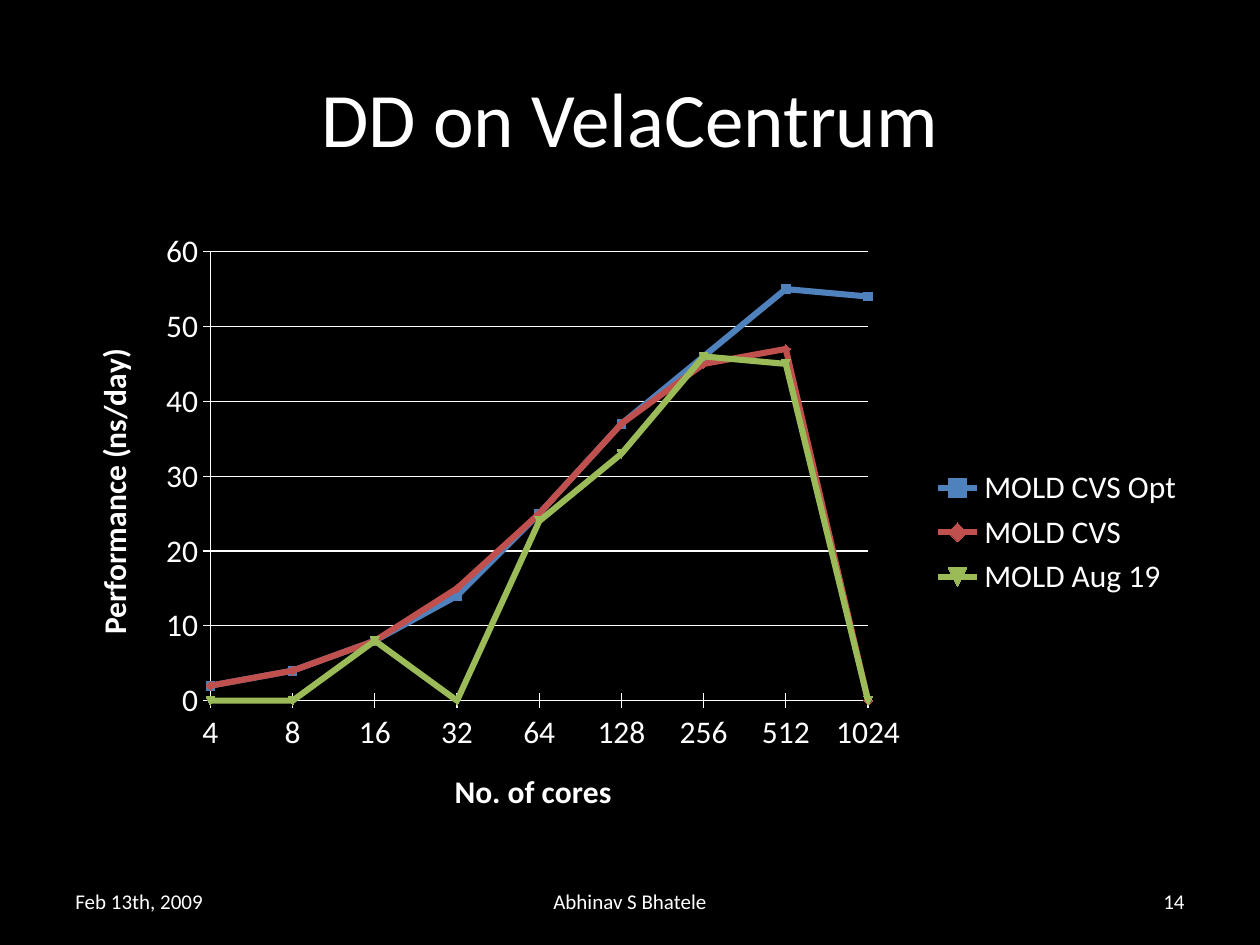
import dataclasses

import pptx
import pptx.chart.data
import pptx.dml.color
import pptx.enum.chart
import pptx.enum.text
import pptx.util
from lxml import etree

Pt = pptx.util.Pt
RGB = pptx.dml.color.RGBColor.from_string
ALIGN = pptx.enum.text.PP_ALIGN


@dataclasses.dataclass(frozen=True)
class Theme:
    font: str = "Calibri"
    background: str = "000000"
    ink: str = "FFFFFF"
    series: tuple = ("4F81BD", "C0504D", "9BBB59")
    title_size: int = 44
    chart_size: int = 18
    footer_size: int = 12


class Deck:
    def __init__(self, prs, theme):
        self.theme = theme
        self.s = prs.slides.add_slide(prs.slide_layouts[6])
        fill = self.s.background.fill
        fill.solid()
        fill.fore_color.rgb = RGB(theme.background)

    def style_font(self, font, size, bold=False):
        font.name = self.theme.font
        font.size = Pt(size)
        font.bold = bold
        font.color.rgb = RGB(self.theme.ink)

    def text(self, text, box, size, align):
        sp = self.s.shapes.add_textbox(*map(Pt, box))
        tf = sp.text_frame
        tf.word_wrap = True
        tf.vertical_anchor = pptx.enum.text.MSO_ANCHOR.MIDDLE
        p = tf.paragraphs[0]
        p.alignment = align
        r = p.add_run()
        r.text = text
        self.style_font(r.font, size)

    def axis(self, axis, title):
        r = axis.axis_title.text_frame.paragraphs[0].add_run()
        r.text = title
        self.style_font(r.font, self.theme.chart_size, bold=True)
        axis.major_tick_mark = pptx.enum.chart.XL_TICK_MARK.CROSS
        self.ink_line(axis.format.line)

    def ink_line(self, line):
        line.color.rgb = RGB(self.theme.ink)
        line.width = Pt(0.75)

    def line_chart(self, box, categories, series, x_title, y_title, plot):
        data = pptx.chart.data.CategoryChartData()
        data.categories = categories
        for name, values in series.items():
            data.add_series(name, values)
        kind = pptx.enum.chart.XL_CHART_TYPE.LINE_MARKERS
        chart = self.s.shapes.add_chart(kind, *map(Pt, box), data).chart
        self.style_font(chart.font, self.theme.chart_size)
        chart.has_title = False
        chart.has_legend = True
        chart.legend.position = pptx.enum.chart.XL_LEGEND_POSITION.RIGHT
        chart.legend.include_in_layout = False

        self.axis(chart.category_axis, x_title)
        y_axis = chart.value_axis
        self.axis(y_axis, y_title)
        y_axis.minimum_scale, y_axis.maximum_scale, y_axis.major_unit = 0, 60, 10
        y_axis.has_major_gridlines = True
        self.ink_line(y_axis.major_gridlines.format.line)

        chart.plots[0].vary_by_categories = False
        for ser, color in zip(chart.plots[0].series, self.theme.series):
            ser.smooth = False
            ser.format.line.color.rgb = RGB(color)
            ser.format.line.width = Pt(3.5)
            ser.marker.size = 5
            ser.marker.format.fill.solid()
            ser.marker.format.fill.fore_color.rgb = RGB(color)
            ser.marker.format.line.color.rgb = RGB(color)
        self.place_plot(chart, plot)

    def place_plot(self, chart, plot):
        """Fix the inner plot area (fractions) and start the lines on the axis."""
        ns = chart._chartSpace.nsmap["c"]
        area = chart._chartSpace.find(f".//{{{ns}}}plotArea")
        between = etree.Element(f"{{{ns}}}crossBetween", val="midCat")
        area.find(f"{{{ns}}}valAx/{{{ns}}}crosses").addnext(between)
        for old in area.findall(f"{{{ns}}}layout"):
            area.remove(old)
        layout = etree.Element(f"{{{ns}}}layout")
        manual = etree.SubElement(layout, f"{{{ns}}}manualLayout")
        settings = [("layoutTarget", "inner"), ("xMode", "edge"), ("yMode", "edge")]
        for tag, value in settings + list(zip("xywh", plot)):
            etree.SubElement(manual, f"{{{ns}}}{tag}").set("val", str(value))
        area.insert(0, layout)


def main():
    prs = pptx.Presentation()
    prs.slide_width, prs.slide_height = Pt(720), Pt(540)
    theme = Theme()
    deck = Deck(prs, theme)

    deck.text("DD on VelaCentrum", (36, 21.6, 648, 90), theme.title_size, ALIGN.CENTER)
    deck.line_chart(
        (36, 126, 648, 356.4),
        [str(2 ** n) for n in range(2, 11)],
        {
            "MOLD CVS Opt": (2, 4, 8, 14, 25, 37, 46, 55, 54),
            "MOLD CVS": (2, 4, 8, 15, 25, 37, 45, 47, 0),
            "MOLD Aug 19": (0, 0, 8, 0, 24, 33, 46, 45, 0),
        },
        "No. of cores",
        "Performance (ns/day)",
        plot=(0.13, 0.05, 0.58, 0.72),
    )
    footers = [
        ("Feb 13th, 2009", 36, 168, ALIGN.LEFT),
        ("Abhinav S Bhatele", 246, 228, ALIGN.CENTER),
        ("14", 516, 168, ALIGN.RIGHT),
    ]
    for text, left, width, align in footers:
        deck.text(text, (left, 500.5, width, 28.75), theme.footer_size, align)
    prs.save("out.pptx")


if __name__ == "__main__":
    main()
